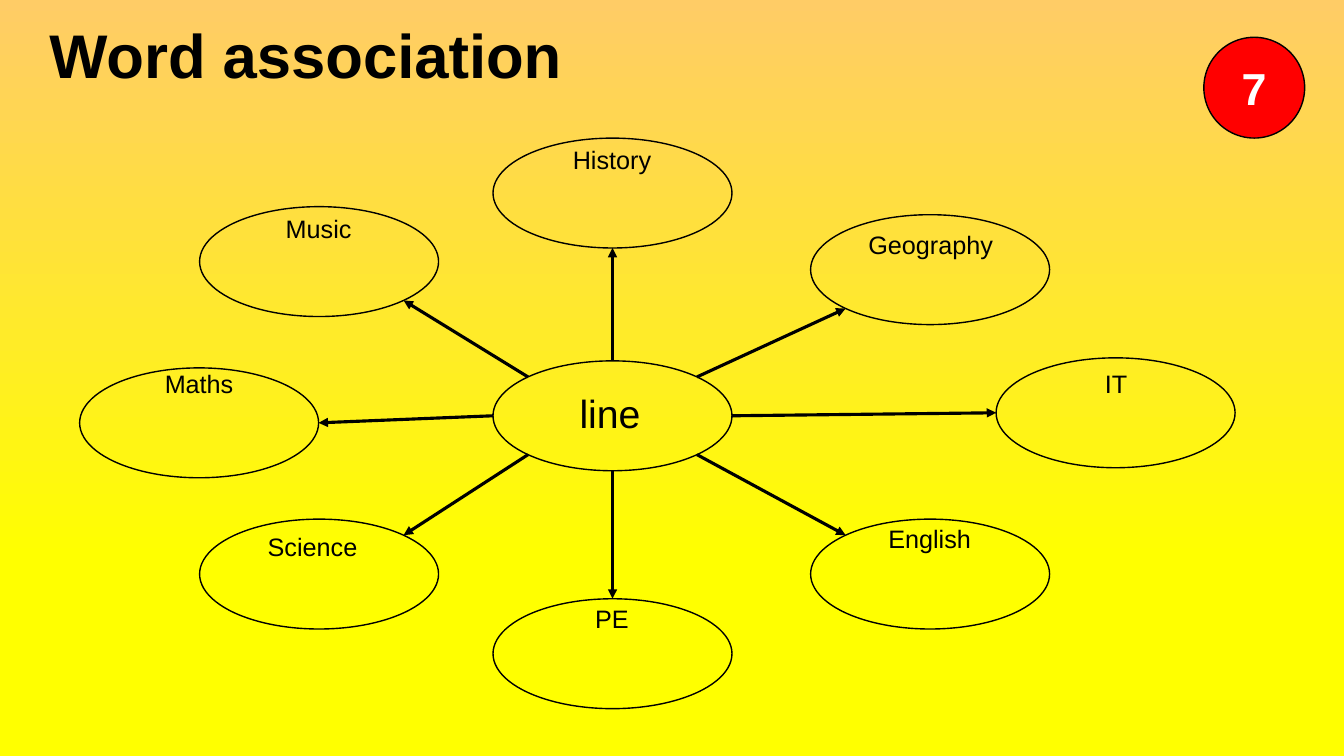
from copy import deepcopy
from math import hypot

from lxml import etree
from pptx import Presentation
from pptx.dml.color import RGBColor
from pptx.enum.shapes import MSO_CONNECTOR, MSO_SHAPE
from pptx.enum.text import MSO_ANCHOR, PP_ALIGN
from pptx.oxml.ns import qn
from pptx.util import Inches, Pt

STRAIGHT, OVAL = MSO_CONNECTOR.STRAIGHT, MSO_SHAPE.OVAL
TOP, MIDDLE = MSO_ANCHOR.TOP, MSO_ANCHOR.MIDDLE
LEFT, CENTER = PP_ALIGN.LEFT, PP_ALIGN.CENTER

# Content
COLORS = {"ink": "000000", "white": "FFFFFF", "badge": "FF0000",
          "sky": "FFCC66", "ground": "FFFF00"}
TITLE, NUMBER = "Word association", "7"
HUB = ("line", (4.89, 3.58), (5.21, 3.81))
# subject, oval corner, label corner, label width, direction from the hub
SUBJECTS = [
    ("History", (4.89, 1.37), (5.23, 1.38), 1.68, (0, -1)),
    ("Geography", (8.04, 2.13), (8.39, 2.23), 1.68, (1, -1)),
    ("IT", (9.88, 3.55), (10.23, 3.6), 1.68, (1, 0)),
    ("English", (8.04, 5.15), (8.38, 5.14), 1.68, (1, 1)),
    ("PE", (4.89, 5.94), (5.23, 5.94), 1.68, (0, 1)),
    ("Science", (1.98, 5.15), (2.26, 5.22), 1.68, (-1, 1)),
    ("Maths", (0.79, 3.65), (1.01, 3.61), 1.93, (-1, 0)),
    ("Music", (1.98, 2.05), (2.32, 2.07), 1.68, (-1, -1)),
]
OVAL_W, OVAL_H = 2.37, 1.09


def rgb(name):
    return RGBColor.from_string(COLORS[name])


def write(sp, text, size=18, color="ink", bold=False, align=CENTER,
          anchor=TOP, spacing=None):
    tf = sp.text_frame
    tf.word_wrap = True
    tf.vertical_anchor = anchor
    p = tf.paragraphs[0]
    p.alignment, p.line_spacing = align, spacing
    r = p.add_run()
    r.text = text
    r.font.name, r.font.size, r.font.bold = "Arial", Pt(size), bold
    r.font.color.rgb = rgb(color)


def add_oval(corner, width=OVAL_W, height=OVAL_H, fill=None):
    sp = s.shapes.add_shape(OVAL, *map(Inches, (*corner, width, height)))
    sp.shadow.inherit = False
    if fill:
        sp.fill.solid()
        sp.fill.fore_color.rgb = rgb(fill)
    else:
        sp.fill.background()
    sp.line.color.rgb = rgb("ink")
    sp.line.width = Pt(1)
    return sp


def add_label(text, corner, width=1.68, height=0.4, **fmt):
    write(s.shapes.add_textbox(*map(Inches, (*corner, width, height))), text, **fmt)


def rim_point(corner, dx, dy):
    """Point on an oval's edge at one of its eight compass sites."""
    reach = hypot(dx, dy)
    return (corner[0] + OVAL_W / 2 * (1 + dx / reach),
            corner[1] + OVAL_H / 2 * (1 + dy / reach))


def add_arrow(start, end):
    line = s.shapes.add_connector(STRAIGHT, *map(Inches, (*start, *end)))
    line.line.color.rgb = rgb("ink")
    line.line.width = Pt(2.25)
    etree.SubElement(line.line._get_or_add_ln(), qn("a:tailEnd"), type="triangle")
    etree.SubElement(line._element.spPr, qn("a:effectLst"))


prs = Presentation()
prs.slide_width, prs.slide_height = Inches(13.33), Inches(7.5)
s = prs.slides.add_slide(prs.slide_layouts[5])

# Background: fades to yellow, then stays yellow to the bottom
fill = s.background.fill
fill.gradient()
fill.gradient_angle = 270
for stop, name, position in zip(fill.gradient_stops, ("sky", "ground"), (0, 0.74)):
    stop.color.rgb = rgb(name)
    stop.position = position
stops = next(s._element.iter(qn("a:gsLst")))
last = deepcopy(stops[-1])
last.set("pos", "100000")
stops.append(last)

# Title and number badge
title = s.shapes.title
title.left, title.top, title.width, title.height = map(Inches, (0.39, 0.15, 6.13, 0.86))
write(title, TITLE, size=44, bold=True, align=LEFT, anchor=MIDDLE, spacing=0.9)
write(add_oval((11.94, 0.37), 1, 1, fill="badge"), NUMBER,
      size=32, color="white", bold=True, anchor=MIDDLE)

# Hub word
hub_word, hub_corner, hub_label = HUB
add_label(hub_word, hub_label, height=0.57, size=28)
add_oval(hub_corner)

# Subjects around the hub, each reached by an arrow
for subject, corner, label_corner, label_width, (dx, dy) in SUBJECTS:
    add_label(subject, label_corner, label_width)
    add_oval(corner)
    add_arrow(rim_point(hub_corner, dx, dy), rim_point(corner, -dx, -dy))

prs.save("out.pptx")
